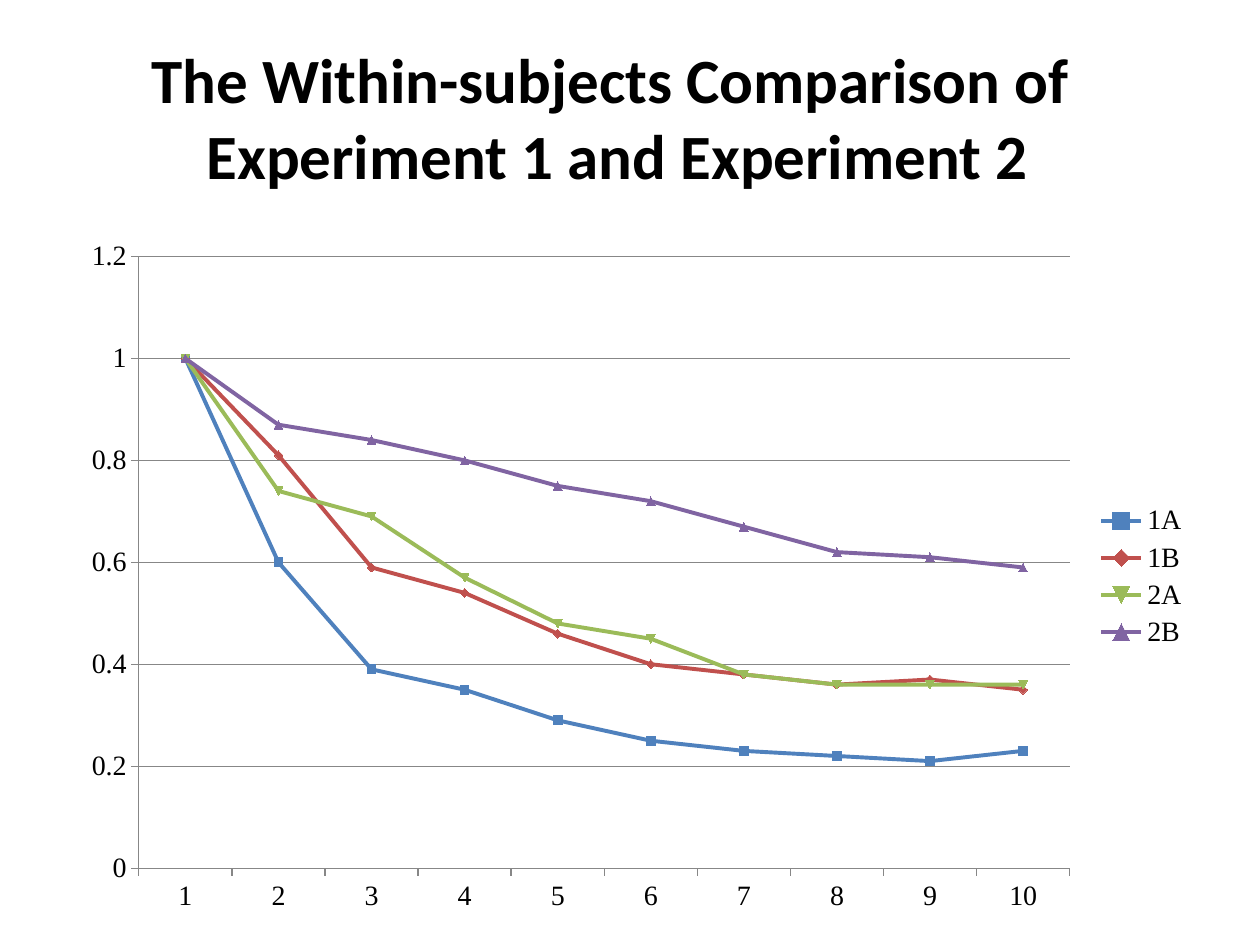
import pptx
import pptx.chart.data
import pptx.dml.color
import pptx.enum.chart
import pptx.enum.text
import pptx.util
from pptx.util import Inches

CATEGORIES = [str(n) for n in range(1, 11)]
SERIES = [
    ("1A", "4F81BD", (1, 0.6, 0.39, 0.35, 0.29, 0.25, 0.23, 0.22, 0.21, 0.23)),
    ("1B", "C0504D", (1, 0.81, 0.59, 0.54, 0.46, 0.4, 0.38, 0.36, 0.37, 0.35)),
    ("2A", "9BBB59", (1, 0.74, 0.69, 0.57, 0.48, 0.45, 0.38, 0.36, 0.36, 0.36)),
    ("2B", "8064A2", (1, 0.87, 0.84, 0.8, 0.75, 0.72, 0.67, 0.62, 0.61, 0.59)),
]


def rgb(color):
    return pptx.dml.color.RGBColor.from_string(color)


def set_font(font, size, name, color="000000", bold=False):
    font.size = pptx.util.Pt(size)
    font.name = name
    font.bold = bold
    font.color.rgb = rgb(color)


def set_line(line, color, width):
    line.color.rgb = rgb(color)
    line.width = pptx.util.Pt(width)


def write_text(tf, text, **fmt):
    """Fill a frame with one centred paragraph; a vertical tab breaks the line."""
    tf.word_wrap = True
    tf.auto_size = pptx.enum.text.MSO_AUTO_SIZE.NONE
    tf.vertical_anchor = pptx.enum.text.MSO_ANCHOR.MIDDLE
    tf.text = text
    p = tf.paragraphs[0]
    p.alignment = pptx.enum.text.PP_ALIGN.CENTER
    for r in p.runs:
        set_font(r.font, **fmt)


def place_title(s, left, top, width, height):
    sp = s.shapes.title
    sp.left, sp.top, sp.width, sp.height = left, top, width, height
    write_text(sp.text_frame,
               "The Within-subjects Comparison of \vExperiment 1 and Experiment 2",
               size=36, name="Calibri", bold=True)


def add_comparison_chart(s, left, top, width, height):
    data = pptx.chart.data.CategoryChartData()
    data.categories = CATEGORIES
    for name, _, values in SERIES:
        data.add_series(name, values)
    chart = s.shapes.add_chart(pptx.enum.chart.XL_CHART_TYPE.LINE_MARKERS,
                               left, top, width, height, data).chart
    set_font(chart.font, 16, "Times New Roman")
    chart.has_title = False
    chart.has_legend = True
    chart.legend.position = pptx.enum.chart.XL_LEGEND_POSITION.RIGHT
    chart.legend.include_in_layout = False

    for axis in (chart.category_axis, chart.value_axis):
        axis.major_tick_mark = pptx.enum.chart.XL_TICK_MARK.OUTSIDE
        axis.minor_tick_mark = pptx.enum.chart.XL_TICK_MARK.NONE
        set_line(axis.format.line, "878787", 0.75)
    axis = chart.value_axis
    axis.minimum_scale, axis.maximum_scale, axis.major_unit = 0, 1.2, 0.2
    axis.has_major_gridlines = True
    set_line(axis.major_gridlines.format.line, "878787", 0.75)

    plot = chart.plots[0]
    plot.vary_by_categories = False
    for series, (_, color, _) in zip(plot.series, SERIES):
        series.smooth = False
        set_line(series.format.line, color, 2.25)


def main():
    prs = pptx.Presentation()
    prs.slide_width, prs.slide_height = Inches(10), Inches(7.5)
    s = prs.slides.add_slide(prs.slide_layouts[5])
    place_title(s, Inches(0.5), Inches(0.3), Inches(8.8), Inches(1.25))
    add_comparison_chart(s, Inches(0.55), Inches(1.8), Inches(8.98), Inches(5.55))
    prs.save("out.pptx")


if __name__ == "__main__":
    main()
